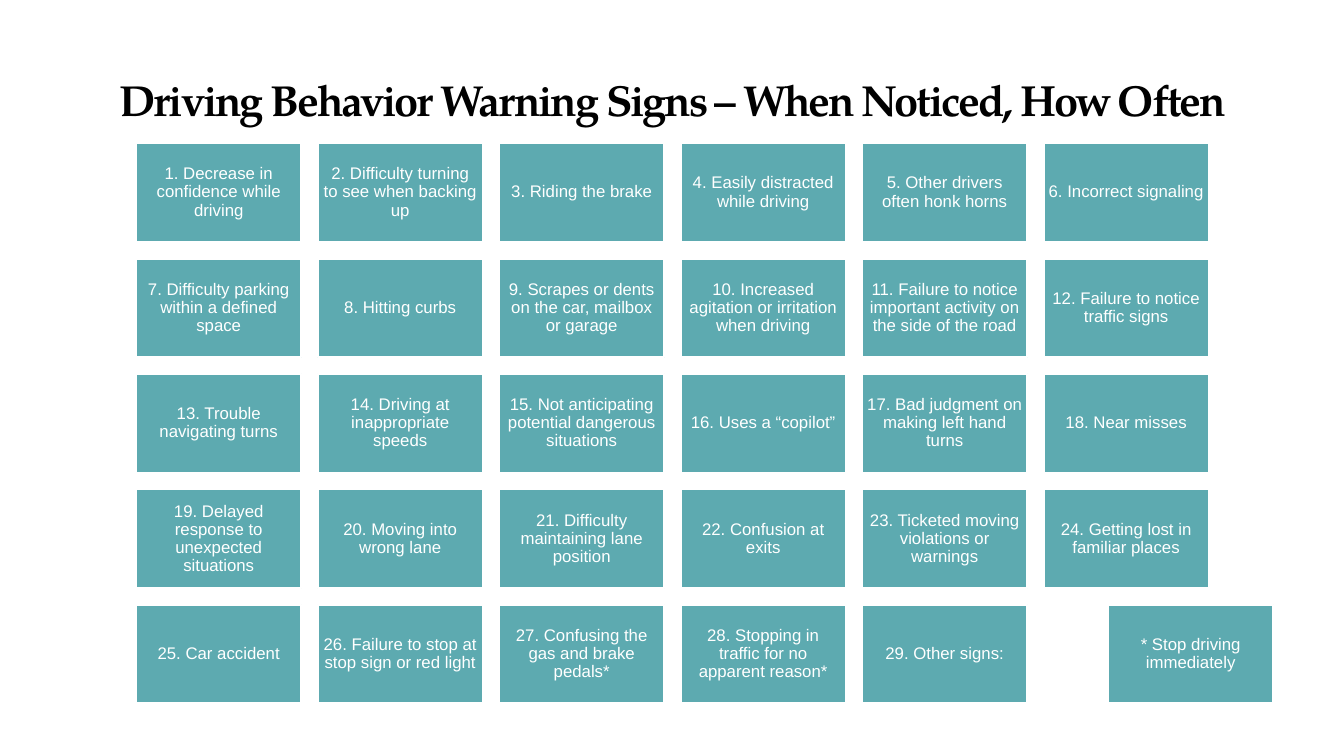
from pptx import Presentation
from pptx.dml.color import RGBColor
from pptx.enum.shapes import MSO_SHAPE as Shape
from pptx.enum.text import MSO_ANCHOR as Anchor, MSO_AUTO_SIZE as AutoSize, PP_ALIGN as Align
from pptx.util import Inches, Pt

TITLE = "Driving Behavior Warning Signs – When Noticed, How Often"
WARNING_SIGNS = [
    "Decrease in confidence while driving",
    "Difficulty turning to see when backing up",
    "Riding the brake",
    "Easily distracted while driving",
    "Other drivers often honk horns",
    "Incorrect signaling",
    "Difficulty parking within a defined space",
    "Hitting curbs",
    "Scrapes or dents on the car, mailbox or garage",
    "Increased agitation or irritation when driving",
    "Failure to notice important activity on the side of the road",
    "Failure to notice traffic signs",
    "Trouble navigating turns",
    "Driving at inappropriate speeds",
    "Not anticipating potential dangerous situations",
    "Uses a “copilot”",
    "Bad judgment on making left hand turns",
    "Near misses",
    "Delayed response to unexpected situations",
    "Moving into wrong lane",
    "Difficulty maintaining lane position",
    "Confusion at exits",
    "Ticketed moving violations or warnings",
    "Getting lost in familiar places",
    "Car accident",
    "Failure to stop at stop sign or red light",
    "Confusing the gas and brake pedals*",
    "Stopping in traffic for no apparent reason*",
    "Other signs:",
]
COLUMNS = 6
LEFT, COLUMN_STEP = 1.35, 1.8
TOP, LAST_TOP = 1.42, 6
ROW_STEP = (LAST_TOP - TOP) / 4
NOTE_LEFT = 10.99


def color(value):
    return RGBColor.from_string(value)


def write_text(frame, text, *, size, font, fill, bold=False, anchor=Anchor.MIDDLE,
               space_after=0, tracking=0):
    frame.word_wrap = True
    frame.auto_size = AutoSize.NONE
    frame.vertical_anchor = anchor
    paragraph = frame.paragraphs[0]
    paragraph.alignment = Align.CENTER
    paragraph.line_spacing = 0.9
    paragraph.space_before = Pt(0)
    paragraph.space_after = Pt(space_after)
    run = paragraph.add_run()
    run.text = text
    run.font.size = Pt(size)
    run.font.name = font
    run.font.bold = bold
    run.font.color.rgb = color(fill)
    if tracking:
        run.font._element.set("spc", str(int(tracking * 100)))


class WarningSlide:
    """Holds the style of the warning-sign cards and the slide they sit on."""

    teal, white, black = "5DAAB0", "FFFFFF", "000000"
    title_font, body_font = "TeX Gyre Pagella", "Arial"
    card_width, card_height = 1.64, 0.98

    def __init__(self, presentation):
        self.slide = presentation.slides.add_slide(presentation.slide_layouts[5])

    def title(self, text):
        shape = self.slide.shapes.title
        shape.left, shape.top = Inches(0.71), Inches(0.32)
        shape.width, shape.height = Inches(11.92), Inches(0.98)
        write_text(shape.text_frame, text, size=31, font=self.title_font, fill=self.black,
                   bold=True, anchor=Anchor.BOTTOM, space_after=6, tracking=-1.5)

    def card(self, text, left, top):
        shape = self.slide.shapes.add_shape(
            Shape.RECTANGLE, Inches(left), Inches(top),
            Inches(self.card_width), Inches(self.card_height))
        shape.shadow.inherit = False
        shape.fill.solid()
        shape.fill.fore_color.rgb = color(self.teal)
        shape.line.color.rgb = color(self.white)
        shape.line.width = Pt(1.5)
        frame = shape.text_frame
        frame.margin_left = frame.margin_right = Inches(0.05)
        frame.margin_top = frame.margin_bottom = Inches(0.05)
        write_text(frame, text, size=12, font=self.body_font, fill=self.white)


def main():
    presentation = Presentation()
    presentation.slide_width = Inches(13.33)
    presentation.slide_height = Inches(7.5)
    page = WarningSlide(presentation)
    page.title(TITLE)
    for index, sign in enumerate(WARNING_SIGNS):
        row, column = divmod(index, COLUMNS)
        page.card(f"{index + 1}. {sign}", LEFT + column * COLUMN_STEP, TOP + row * ROW_STEP)
    page.card("* Stop driving immediately", NOTE_LEFT, LAST_TOP)
    presentation.save("out.pptx")


if __name__ == "__main__":
    main()
